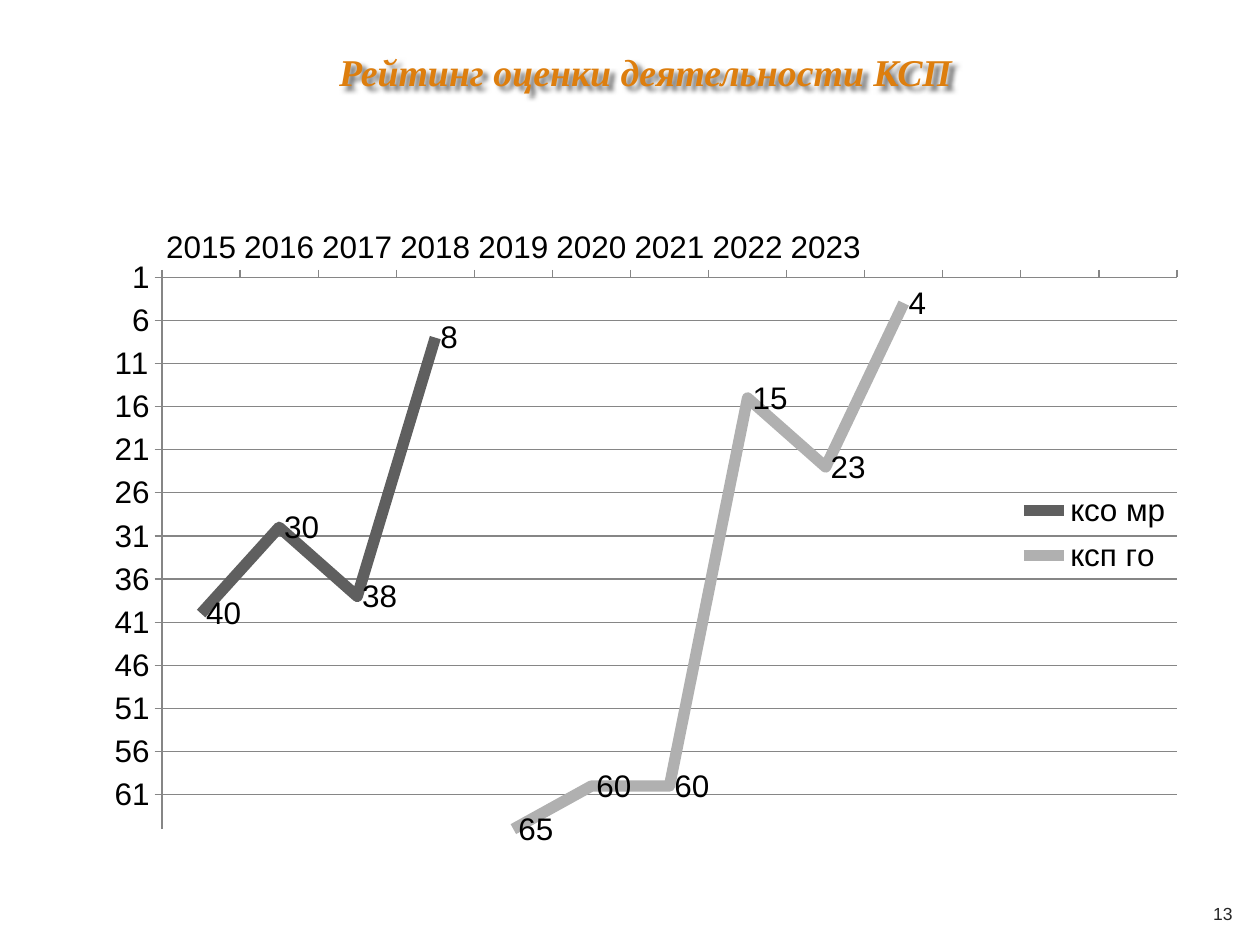
import dataclasses

import lxml.etree
import pptx
import pptx.chart.data
import pptx.dml.color
import pptx.enum.chart
import pptx.enum.text
import pptx.oxml
import pptx.oxml.ns
import pptx.util

Inches = pptx.util.Inches
Pt = pptx.util.Pt


@dataclasses.dataclass(frozen=True)
class Theme:
    title_font: str = "Times New Roman"
    body_font: str = "Arial"
    title_size: float = 21.6
    chart_size: float = 18
    number_size: float = 10
    title_color: str = "DD7E0E"
    number_color: str = "262626"
    chart_color: str = "000000"
    axis_color: str = "868686"
    series_colors: tuple = ("5F5F5F", "B0B0B0")
    series_width: float = 6.5


def rgb(value):
    return pptx.dml.color.RGBColor.from_string(value)


def set_layout(parent, index, x, y, w, h, inner=False):
    for old in parent.findall(pptx.oxml.ns.qn("c:layout")):
        parent.remove(old)
    target = '<c:layoutTarget val="inner"/>' if inner else ""
    parent.insert(index, pptx.oxml.parse_xml(
        f'<c:layout {pptx.oxml.ns.nsdecls("c")}><c:manualLayout>{target}'
        '<c:xMode val="edge"/><c:yMode val="edge"/>'
        f'<c:x val="{x}"/><c:y val="{y}"/><c:w val="{w}"/><c:h val="{h}"/>'
        '</c:manualLayout></c:layout>'))


class SlideBuilder:
    def __init__(self, slide, theme):
        self.slide = slide
        self.theme = theme

    def style_font(self, font, name, size, color):
        font.name = name
        font.size = Pt(size)
        font.color.rgb = rgb(color)

    def text(self, area, words, name, size, color, emphasis=False):
        box = self.slide.shapes.add_textbox(*map(Inches, area))
        frame = box.text_frame
        frame.word_wrap = True
        frame.vertical_anchor = pptx.enum.text.MSO_ANCHOR.MIDDLE
        para = frame.paragraphs[0]
        para.alignment = pptx.enum.text.PP_ALIGN.CENTER
        span = para.add_run()
        span.text = words
        self.style_font(span.font, name, size, color)
        span.font.bold = span.font.italic = emphasis
        return box

    def shadow(self, box):
        box.element.spPr.append(pptx.oxml.parse_xml(
            f'<a:effectLst {pptx.oxml.ns.nsdecls("a")}>'
            '<a:outerShdw blurRad="38100" dist="38100" dir="2700000">'
            '<a:srgbClr val="000000"><a:alpha val="55000"/></a:srgbClr>'
            '</a:outerShdw></a:effectLst>'))

    def line_chart(self, area, categories, series):
        theme = self.theme
        data = pptx.chart.data.CategoryChartData()
        data.categories = categories
        for name, values in series:
            data.add_series(name, values)
        chart = self.slide.shapes.add_chart(
            pptx.enum.chart.XL_CHART_TYPE.LINE, *map(Inches, area), data).chart
        chart.has_title = False
        self.style_font(chart.font, theme.body_font, theme.chart_size, theme.chart_color)
        plot = chart.plots[0]
        plot.vary_by_categories = False
        for line, color in zip(plot.series, theme.series_colors):
            line.smooth = False
            line.marker.style = pptx.enum.chart.XL_MARKER_STYLE.NONE
            line.format.line.width = Pt(theme.series_width)
            line.format.line.color.rgb = rgb(color)
            labels = line.data_labels
            labels.show_value = True
            labels.position = pptx.enum.chart.XL_LABEL_POSITION.RIGHT
        self.axes(chart)
        chart.has_legend = True
        legend = chart.legend
        legend.position = pptx.enum.chart.XL_LEGEND_POSITION.RIGHT
        legend.include_in_layout = False
        set_layout(legend._element, 1, 0.84, 0.43, 0.15, 0.16)
        set_layout(plot._element.getparent(), 0, 0.043, 0.101, 0.949, 0.883, True)

    def axes(self, chart):
        values = chart.value_axis
        values.minimum_scale = 1
        values.maximum_scale = 65
        values.major_unit = 5
        values.reverse_order = True
        values.has_major_gridlines = True
        lines = [values.major_gridlines.format.line]
        for axis in (values, chart.category_axis):
            axis.major_tick_mark = pptx.enum.chart.XL_TICK_MARK.OUTSIDE
            axis.minor_tick_mark = pptx.enum.chart.XL_TICK_MARK.NONE
            lines.append(axis.format.line)
        for line in lines:
            line.width = Pt(0.75)
            line.color.rgb = rgb(self.theme.axis_color)


def main():
    deck = pptx.Presentation()
    deck.slide_width = Inches(10)
    deck.slide_height = Inches(7.5)
    theme = Theme()
    page = SlideBuilder(deck.slides.add_slide(deck.slide_layouts[6]), theme)
    title = page.text((0.5, 0.21, 9.25, 0.71), "Рейтинг оценки деятельности КСП",
                      theme.title_font, theme.title_size, theme.title_color, True)
    page.shadow(title)
    page.text((9.45, 7.05, 0.51, 0.4), "13",
              theme.body_font, theme.number_size, theme.number_color)
    years = [str(year) for year in range(2015, 2024)]
    page.line_chart((0.91, 1.7, 8.5, 5.02), years + [""] * 4, [
        ("ксо мр", [40, 30, 38, 8] + [None] * 9),
        ("ксп го", [None] * 4 + [65, 60, 60, 15, 23, 4] + [None] * 3),
    ])
    deck.save("out.pptx")


if __name__ == "__main__":
    main()
